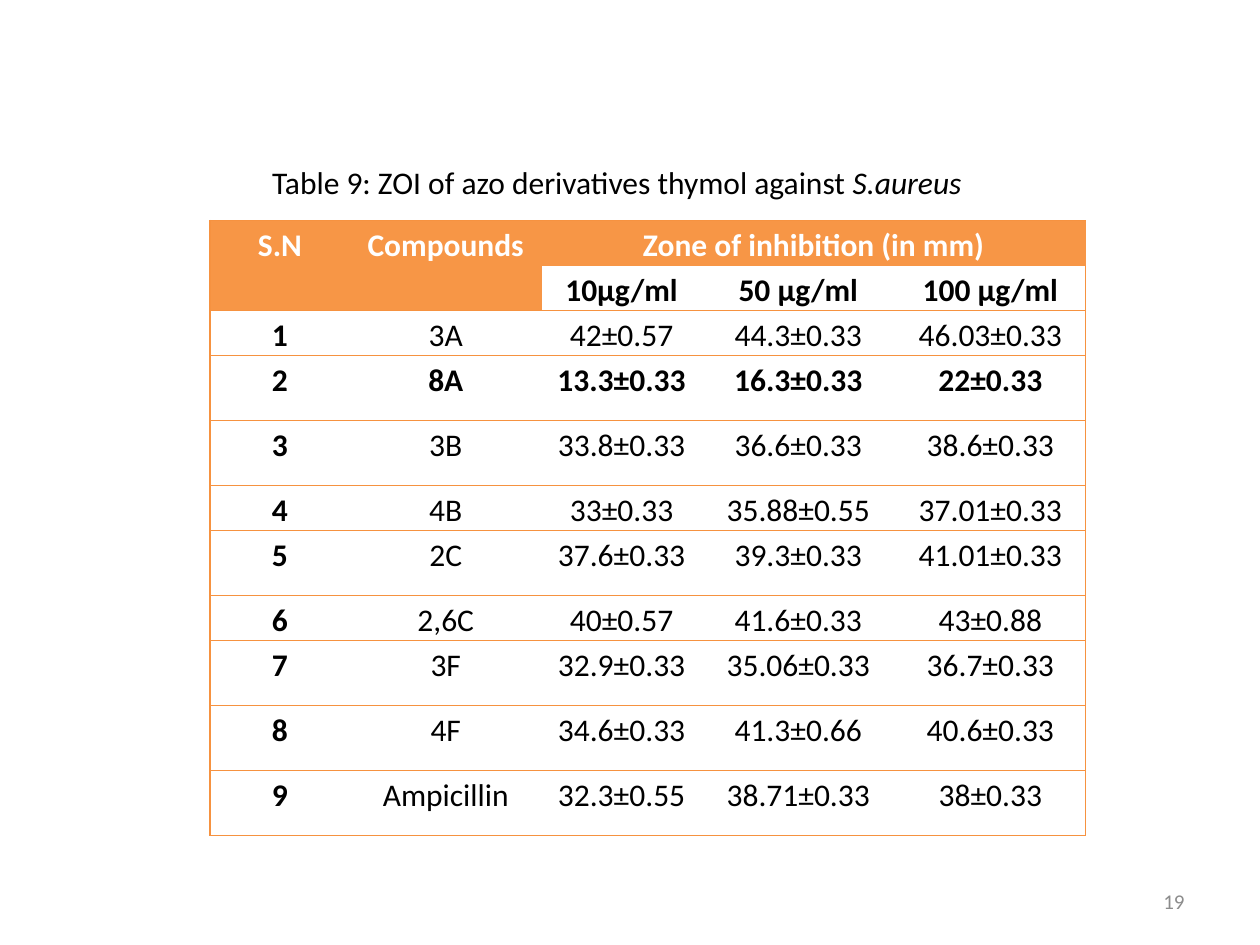
from lxml.etree import SubElement
from pptx import Presentation
from pptx.dml.color import RGBColor
from pptx.enum.text import MSO_ANCHOR as ANCHOR, PP_ALIGN as ALIGN
from pptx.oxml.ns import qn
from pptx.util import Pt

ORANGE, LINE, WHITE, BLACK, GREY = "F79646", "F69240", "FFFFFF", "000000", "8C8C8C"
NO_GRID = "{2D5ABB26-0587-4C30-8999-92F81FD0307C}"
COL_WIDTHS = [80, 109.5, 91.5, 110.5, 109]
SHORT, TALL = 25.8, 37.1
ROW_HEIGHTS = [SHORT] * 3 + [TALL] * 2 + [SHORT, TALL, SHORT] + [TALL] * 3
HEADERS = ["S.N", "Compounds", "Zone of inhibition (in mm)"]
DOSES = ["10µg/ml", "50 µg/ml", "100 µg/ml"]
RESULTS = [
    ["3A", "42±0.57", "44.3±0.33", "46.03±0.33"],
    ["8A", "13.3±0.33", "16.3±0.33", "22±0.33"],
    ["3B", "33.8±0.33", "36.6±0.33", "38.6±0.33"],
    ["4B", "33±0.33", "35.88±0.55", "37.01±0.33"],
    ["2C", "37.6±0.33", "39.3±0.33", "41.01±0.33"],
    ["2,6C", "40±0.57", "41.6±0.33", "43±0.88"],
    ["3F", "32.9±0.33", "35.06±0.33", "36.7±0.33"],
    ["4F", "34.6±0.33", "41.3±0.66", "40.6±0.33"],
    ["Ampicillin", "32.3±0.55", "38.71±0.33", "38±0.33"],
]
HIGHLIGHT = "8A"


def rgb(color):
    return RGBColor.from_string(color)


def add_text(p, text, size=18, color=BLACK, bold=False, italic=False,
             align=ALIGN.CENTER, spacing=None):
    p.alignment = align
    if spacing:
        p.line_spacing = spacing
    r = p.add_run()
    r.text = text
    font = r.font
    font.name, font.size, font.bold, font.italic = "Calibri", Pt(size), bold, italic
    font.color.rgb = rgb(color)


def add_box(s, x, y, w, h, anchor=ANCHOR.TOP):
    tf = s.shapes.add_textbox(Pt(x), Pt(y), Pt(w), Pt(h)).text_frame
    tf.word_wrap = True
    tf.vertical_anchor = anchor
    return tf.paragraphs[0]


def add_caption(s, x, y, w, h):
    p = add_box(s, x, y, w, h)
    add_text(p, "Table 9: ZOI of azo derivatives thymol against ")
    add_text(p, "S.aureus", italic=True)


def add_page_number(s, x, y, w, h):
    p = add_box(s, x, y, w, h, ANCHOR.MIDDLE)
    add_text(p, "19", size=12, color=GREY, align=ALIGN.RIGHT)


def set_borders(cell, sides):
    tc_pr = cell._tc.get_or_add_tcPr()
    for side in sides:
        ln = SubElement(tc_pr, qn(f"a:ln{side}"), w=str(Pt(0.75)))
        fill = SubElement(ln, qn("a:solidFill"))
        SubElement(fill, qn("a:srgbClr"), val=LINE)


def format_cell(cell, sides, fill):
    cell.margin_left = cell.margin_right = Pt(5)
    cell.margin_top = cell.margin_bottom = 0
    set_borders(cell, sides)
    cell.fill.solid()
    cell.fill.fore_color.rgb = rgb(fill)


def add_results_table(s, x, y, w, h):
    rows = [HEADERS + ["", ""], ["", ""] + DOSES]
    rows += [[str(n), *result] for n, result in enumerate(RESULTS, 1)]
    frame = s.shapes.add_table(len(rows), len(COL_WIDTHS), Pt(x), Pt(y), Pt(w), Pt(h))
    table = frame.table
    table._tbl.tblPr.find(qn("a:tableStyleId")).text = NO_GRID
    table.first_row = table.horz_banding = False
    for col, width in zip(table.columns, COL_WIDTHS):
        col.width = Pt(width)
    for row, height in zip(table.rows, ROW_HEIGHTS):
        row.height = Pt(height)

    # Header spans
    for col in (0, 1):
        table.cell(0, col).merge(table.cell(1, col))
    table.cell(0, 2).merge(table.cell(0, 4))

    # Cells: outer frame plus a rule above every result row
    last_row, last_col = len(rows) - 1, len(COL_WIDTHS) - 1
    for i, values in enumerate(rows):
        for j, text in enumerate(values):
            in_header = i == 0 or (i == 1 and j < 2)
            edges = {"L": j == 0, "R": j == last_col, "T": i != 1, "B": i >= 1}
            cell = table.cell(i, j)
            format_cell(cell, [side for side, on in edges.items() if on],
                        ORANGE if in_header else WHITE)
            if text:
                bold = i < 2 or j == 0 or values[1] == HIGHLIGHT
                add_text(cell.text_frame.paragraphs[0], text, bold=bold,
                         color=WHITE if in_header else BLACK, spacing=1.15)


def main():
    prs = Presentation()
    prs.slide_width, prs.slide_height = Pt(720), Pt(540)
    s = prs.slides.add_slide(prs.slide_layouts[6])
    add_page_number(s, 516, 500.5, 168, 28.75)
    add_results_table(s, 120, 126, sum(COL_WIDTHS), sum(ROW_HEIGHTS))
    add_caption(s, 120, 89.5, 465, 51)
    prs.save("out.pptx")


if __name__ == "__main__":
    main()
